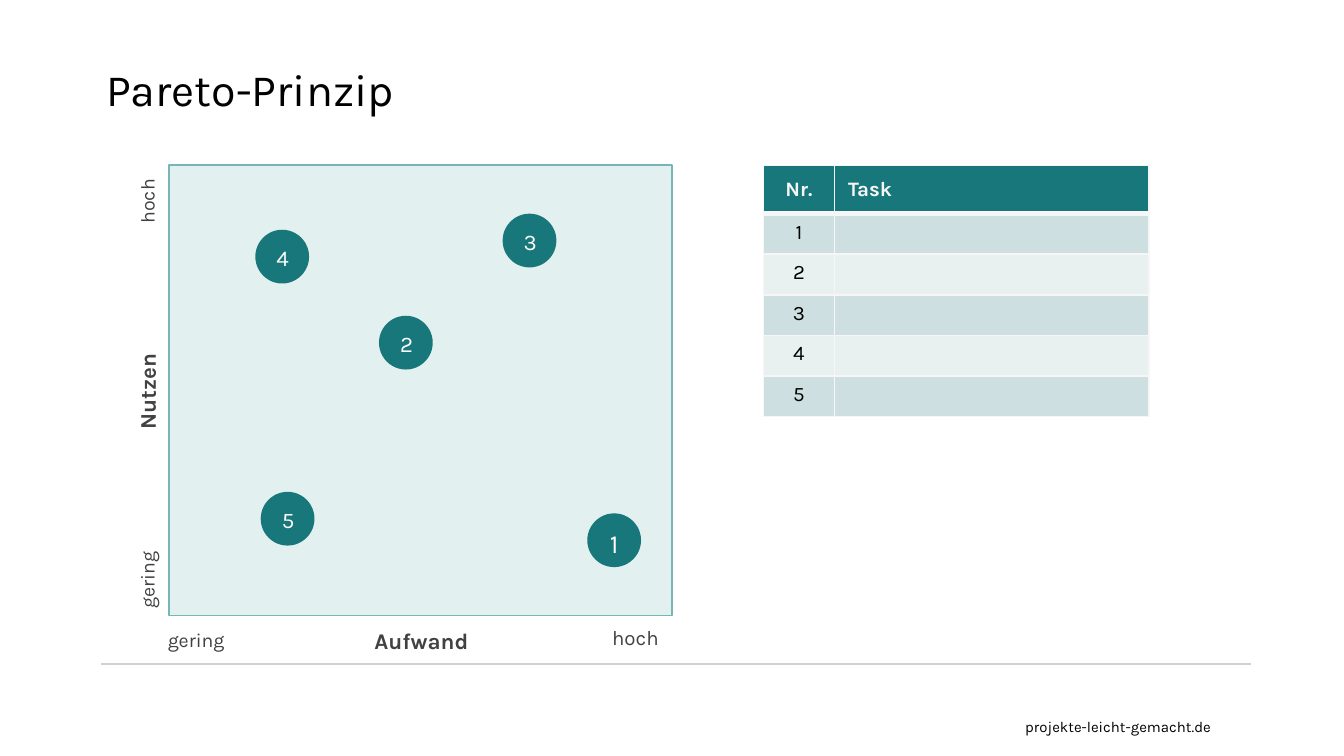
from collections import namedtuple

from lxml import etree
from pptx import Presentation
from pptx.dml.color import RGBColor
from pptx.enum import shapes, text
from pptx.oxml import ns
from pptx.util import Inches, Pt

TEAL = RGBColor(0x18, 0x77, 0x7A)
TEAL_LINE = RGBColor(0x78, 0xB5, 0xB7)
TEAL_PALE = RGBColor(0xE3, 0xF0, 0xF0)
BAND_DARK = RGBColor(0xCD, 0xDF, 0xE0)
BAND_LIGHT = RGBColor(0xE8, 0xF0, 0xF0)
OFF_WHITE = RGBColor(0xF6, 0xF6, 0xF6)
WHITE = RGBColor(0xFF, 0xFF, 0xFF)
BLACK = RGBColor(0, 0, 0)
GREY = RGBColor(0x41, 0x41, 0x41)
RULE_GREY = RGBColor(0xD1, 0xD1, 0xD1)
FONT = "Karla"
LEFT, CENTER, RIGHT = text.PP_ALIGN.LEFT, text.PP_ALIGN.CENTER, text.PP_ALIGN.RIGHT

Box = namedtuple("Box", "left top width height")

# Wording, offset from the matrix, width, height, rotation, size, bold, alignment
AXIS_LABELS = [
    ("gering", -0.11, 3.39, 0.72, 0.29, 0, 10.5, False, LEFT),
    ("Aufwand", 1.08, 3.39, 1.59, 0.3, 0, 12, True, CENTER),
    ("hoch", 2.96, 3.37, 0.78, 0.29, 0, 11, False, RIGHT),
    ("gering", -0.52, 2.89, 0.72, 0.29, 270, 10.5, False, LEFT),
    ("Nutzen", -0.96, 1.53, 1.59, 0.3, 270, 12, True, CENTER),
    ("hoch", -0.45, 0.15, 0.58, 0.29, 270, 10.5, False, RIGHT),
]
# Number, offset from the matrix, text size
TASK_DOTS = [
    ("4", 0.64, 0.48, 12),
    ("2", 1.56, 1.12, 12),
    ("3", 2.48, 0.36, 12),
    ("5", 0.68, 2.43, 12),
    ("1", 3.11, 2.59, 14),
]
DOT_SIZE = 0.4


def inches(box):
    return [Inches(length) for length in box]


def write(frame, words, size=11, color=BLACK, bold=False, align=LEFT, spacing=None):
    para = frame.paragraphs[0]
    para.alignment = align
    if spacing:
        para.line_spacing = spacing
    span = para.add_run()
    span.text = words
    span.font.name = FONT
    span.font.size = Pt(size)
    span.font.bold = bold
    span.font.color.rgb = color


def add_label(page, box, words, rotation=0, **style):
    label = page.shapes.add_textbox(*inches(box))
    label.rotation = rotation
    label.text_frame.word_wrap = True
    write(label.text_frame, words, **style)


def add_filled_shape(page, kind, box, fill, line=None):
    shape = page.shapes.add_shape(kind, *inches(box))
    shape.shadow.inherit = False
    shape.fill.solid()
    shape.fill.fore_color.rgb = fill
    if line is None:
        shape.line.fill.background()
    else:
        shape.line.color.rgb = line
        shape.line.width = Pt(1)
    return shape


def add_title(page, box, words):
    title = page.shapes.title
    title.left, title.top, title.width, title.height = inches(box)
    frame = title.text_frame
    frame.auto_size = text.MSO_AUTO_SIZE.NONE
    frame.vertical_anchor = text.MSO_ANCHOR.MIDDLE
    write(frame, words, size=24, spacing=0.9)


def add_footer(page, box):
    """Rule along the top of the box, web address at its lower right."""
    right = box.left + box.width
    rule = page.shapes.add_connector(
        shapes.MSO_CONNECTOR.STRAIGHT, *inches((box.left, box.top, right, box.top))
    )
    rule.line.color.rgb = RULE_GREY
    rule.line.width = Pt(1)
    etree.SubElement(rule._element.spPr, ns.qn("a:effectLst"))
    add_label(page, Box(right - 1.78, box.top + 0.35, 1.78, 0.46),
              "projekte-leicht-gemacht.de", size=8)


def add_matrix(page, box):
    add_filled_shape(page, shapes.MSO_SHAPE.RECTANGLE, box, TEAL_PALE, TEAL_LINE)
    for words, x, y, width, height, rotation, size, bold, align in AXIS_LABELS:
        add_label(page, Box(box.left + x, box.top + y, width, height), words,
                  rotation, size=size, color=GREY, bold=bold, align=align)
    for number, x, y, size in TASK_DOTS:
        dot_box = Box(box.left + x, box.top + y, DOT_SIZE, DOT_SIZE)
        dot = add_filled_shape(page, shapes.MSO_SHAPE.OVAL, dot_box, TEAL)
        dot.text_frame.vertical_anchor = text.MSO_ANCHOR.TOP
        write(dot.text_frame, number, size=size, color=WHITE, align=CENTER)


def set_borders(cell, **widths):
    """Draw the four cell borders, 1 pt wide unless given by side (L, R, T, B)."""
    properties = cell._tc.get_or_add_tcPr()
    for index, side in enumerate("LRTB"):
        border = etree.Element(ns.qn(f"a:ln{side}"), w=str(Pt(widths.get(side, 1))))
        fill = etree.SubElement(border, ns.qn("a:solidFill"))
        etree.SubElement(fill, ns.qn("a:srgbClr"), val=str(OFF_WHITE))
        properties.insert(index, border)


def fill_cell(cell, words, fill, **style):
    cell.fill.solid()
    cell.fill.fore_color.rgb = fill
    if words:
        write(cell.text_frame, words, **style)
    else:
        para = cell.text_frame.paragraphs[0]
        etree.SubElement(para._p, ns.qn("a:endParaRPr"), sz="1100")


def add_task_table(page, box, tasks=5):
    table = page.shapes.add_table(tasks + 1, 2, *inches(box)).table
    header_height, number_width = 0.36, 0.53
    table.columns[0].width = Inches(number_width)
    table.columns[1].width = Inches(box.width - number_width)
    for row in table.rows:
        row.height = Inches((box.height - header_height) / tasks)
    table.rows[0].height = Inches(header_height)

    for column, (words, align) in enumerate([("Nr.", CENTER), ("Task", LEFT)]):
        cell = table.cell(0, column)
        fill_cell(cell, words, TEAL, color=OFF_WHITE, bold=True, align=align)
        cell.vertical_anchor = text.MSO_ANCHOR.MIDDLE
        set_borders(cell, B=3)
    for number in range(1, tasks + 1):
        band = BAND_DARK if number % 2 else BAND_LIGHT
        for column, words in enumerate([str(number), ""]):
            cell = table.cell(number, column)
            fill_cell(cell, words, band, align=CENTER)
            set_borders(cell, T=3 if number == 1 else 1)


def main():
    deck = Presentation()
    deck.slide_width = Inches(10)
    deck.slide_height = deck.slide_width * 9 // 16
    page = deck.slides.add_slide(deck.slide_layouts.get_by_name("Title Only"))
    add_footer(page, Box(0.75, 4.94, 8.56, 0.68))
    add_title(page, Box(0.69, 0.26, 8.62, 0.85), "Pareto-Prinzip")
    add_task_table(page, Box(5.68, 1.23, 2.87, 1.87))
    add_matrix(page, Box(1.26, 1.23, 3.74, 3.35))
    deck.save("out.pptx")


if __name__ == "__main__":
    main()
